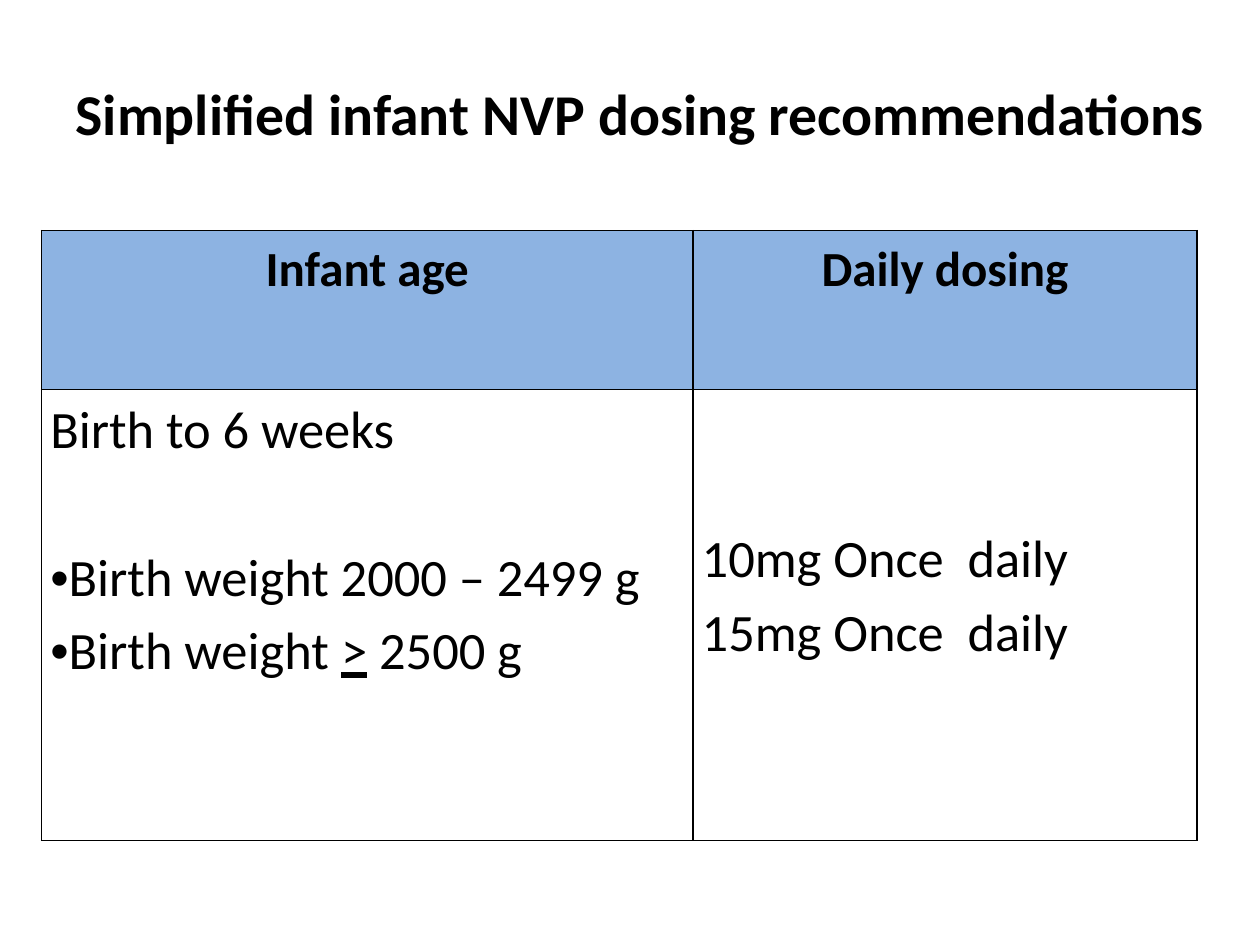
"""Build the slide with the simplified infant NVP dosing table."""
from dataclasses import dataclass

from lxml.etree import SubElement
from pptx import Presentation
from pptx.dml.color import RGBColor as RGB
from pptx.enum.text import MSO_ANCHOR as ANCHOR, PP_ALIGN as ALIGN
from pptx.oxml.ns import qn
from pptx.util import Inches, Pt


@dataclass(frozen=True)
class Theme:
    font: str = "Calibri"
    ink: RGB = RGB.from_string("000000")
    header: RGB = RGB.from_string("8DB3E2")
    title_size: Pt = Pt(33)
    header_size: Pt = Pt(28)
    body_size: Pt = Pt(30)
    border: Pt = Pt(1)


theme = Theme()


def style(p, size, bold, align, spacing):
    p.alignment = align
    p.line_spacing = spacing
    for r in p.runs:
        r.font.name = theme.font
        r.font.size = size
        r.font.bold = bold
        r.font.color.rgb = theme.ink


def add_borders(cell):
    tcPr = cell._tc.get_or_add_tcPr()
    for side in ("lnL", "lnR", "lnT", "lnB"):
        ln = SubElement(tcPr, qn(f"a:{side}"), w=str(theme.border))
        fill = SubElement(ln, qn("a:solidFill"))
        SubElement(fill, qn("a:srgbClr"), val=str(theme.ink))


prs = Presentation()
prs.slide_width, prs.slide_height = Inches(10), Inches(7.5)
s = prs.slides.add_slide(prs.slide_layouts[5])

title = s.shapes.title
title.left, title.top = Inches(0.5), Inches(0.3)
title.width, title.height = Inches(9.17), Inches(1.25)
tf = title.text_frame
tf.text = "Simplified infant NVP dosing recommendations"
tf.vertical_anchor = ANCHOR.MIDDLE
style(tf.paragraphs[0], theme.title_size, True, ALIGN.LEFT, 0.9)

rows = [
    [["Infant age"], ["Daily dosing"]],
    [
        ["Birth to 6 weeks", "Birth weight 2000 – 2499 g", "Birth weight "],
        ["10mg Once  daily", "15mg Once  daily"],
    ],
]
table = s.shapes.add_table(
    2, 2, Inches(0.33), Inches(1.83), Inches(9.17), Inches(4.84)
).table
for column, width in zip(table.columns, (5.17, 4)):
    column.width = Inches(width)
for row, height in zip(table.rows, (1.26, 3.58)):
    row.height = Inches(height)

for i, row in enumerate(rows):
    for j, lines in enumerate(row):
        cell = table.cell(i, j)
        cell.margin_left = cell.margin_right = Inches(0.07)
        cell.margin_top = cell.margin_bottom = 0
        add_borders(cell)
        if i == 0:
            cell.fill.solid()
            cell.fill.fore_color.rgb = theme.header
        else:
            cell.fill.background()
        tf = cell.text_frame
        tf.text = "\n".join(lines)
        if i == 1 and j == 0:
            for text in (">", " 2500 g"):
                r = tf.paragraphs[-1].add_run()
                r.text = text
                r.font.underline = text == ">"
        for p in tf.paragraphs:
            if i == 0:
                style(p, theme.header_size, True, ALIGN.CENTER, 1.15)
            else:
                style(p, theme.body_size, False, ALIGN.LEFT, 1.15)

weights = table.cell(1, 0).text_frame.paragraphs[1:]
weights[0].space_before = Pt(42)
for p in weights:
    pPr = p._p.get_or_add_pPr()
    pPr.set("marL", "0")
    pPr.set("indent", "0")
    SubElement(pPr, qn("a:buFont"), typeface="Arial")
    SubElement(pPr, qn("a:buChar"), char="•")
table.cell(1, 1).margin_top = Inches(1.02)

prs.save("out.pptx")
